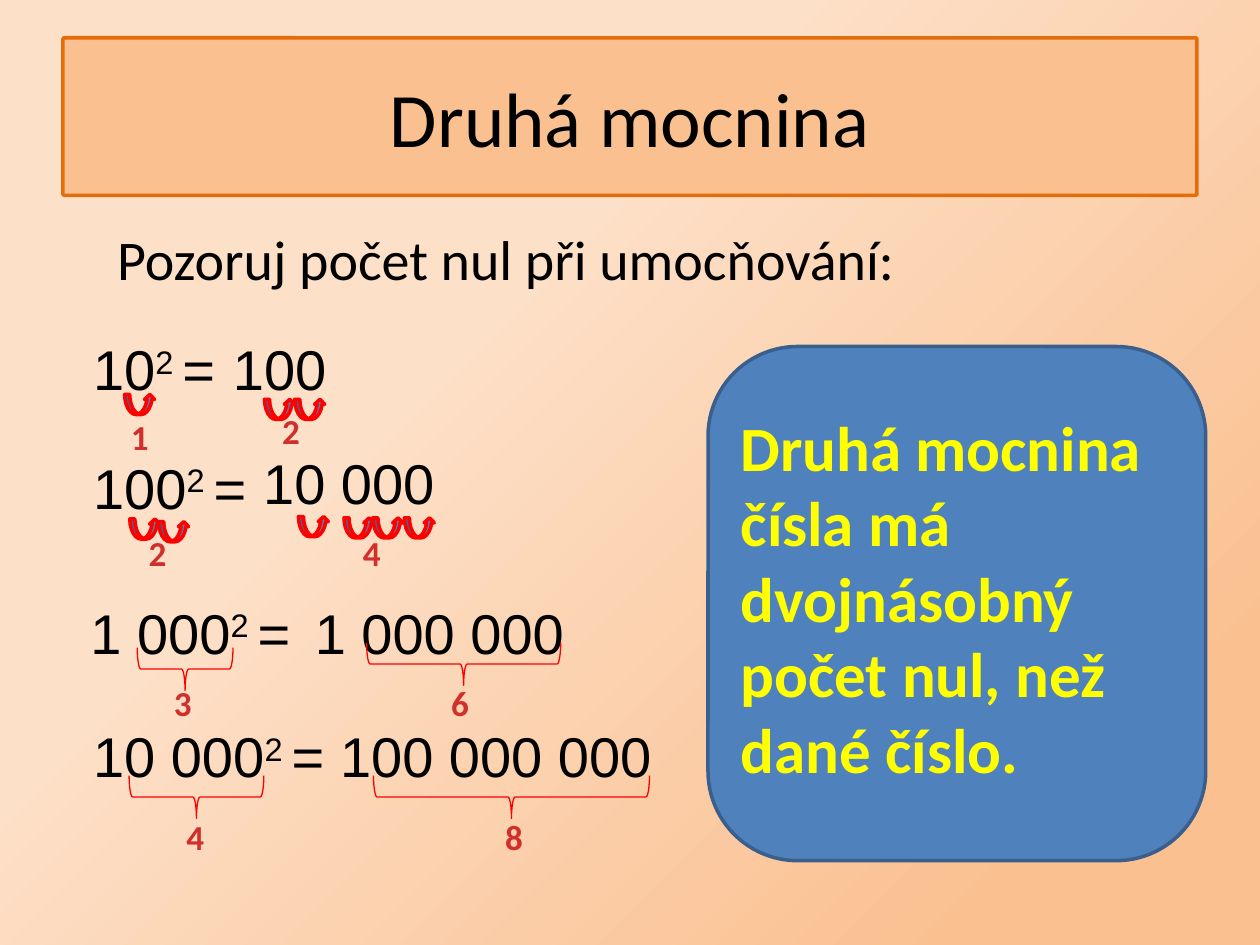
from dataclasses import dataclass

from pptx import Presentation
from pptx.dml.color import RGBColor
from pptx.enum.shapes import MSO_SHAPE
from pptx.enum.text import MSO_ANCHOR, MSO_AUTO_SIZE, PP_ALIGN
from pptx.util import Pt

COLORS = {
    "light peach": "FDE0C8",
    "peach": "FAC090",
    "orange": "E46C0A",
    "blue": "4F81BD",
    "dark blue": "3A5F8C",
    "red": "FF0000",
    "count red": "D02F2C",
    "yellow": "FFFF00",
    "black": "000000",
}
ROW_HEIGHT = 46.1
HOP_SIZE = (17.3, 11.5)
COUNT_SIZE = (24.5, 31.7)
BRACE_DEPTH = 24.5


@dataclass
class Box:
    left: float
    top: float
    width: float
    height: float = ROW_HEIGHT

    def lengths(self) -> list:
        return [Pt(v) for v in (self.left, self.top, self.width, self.height)]


@dataclass
class Equation:
    base: str
    power_box: Box
    result: str
    result_box: Box


@dataclass
class Brace:
    center_x: float
    center_y: float
    span: float


@dataclass
class ZeroCount:
    digit: str
    left: float
    top: float


EQUATIONS = [
    Equation("10", Box(46.1, 187.9, 87.1), "100", Box(126, 187.9, 68.4)),
    Equation("100", Box(46.1, 255.6, 105.1), "10 000", Box(143.3, 252.7, 113)),
    Equation("1 000", Box(44.6, 338.4, 131.8), "1 000 000", Box(172.8, 338.4, 167)),
    Equation("10 000", Box(46.1, 409, 149.8), "100 000 000", Box(187.2, 409, 193.7)),
]
HOPS = [
    (71.3, 225.4), (151.2, 228.2), (168.5, 228.2),
    (74.2, 296.6), (90.7, 298.1), (170.6, 295.2),
    (196.6, 295.9), (213.1, 295.9), (231.1, 295.9),
]
COUNTS = [
    ZeroCount("1", 67.7, 234), ZeroCount("2", 154.1, 230.4),
    ZeroCount("2", 77.8, 300.2), ZeroCount("4", 200.2, 300.2),
    ZeroCount("3", 92.2, 385.9), ZeroCount("6", 250.6, 385.9),
    ZeroCount("4", 99.4, 462.2), ZeroCount("8", 281.5, 462.2),
]
BRACES = [
    Brace(105.8, 382.3, 54.7), Brace(265, 379.4, 110.9),
    Brace(112.3, 455.4, 77), Brace(292.3, 455.4, 157.7),
]


def rgb(name: str) -> RGBColor:
    return RGBColor.from_string(COLORS[name])


def add_figure(shapes, kind, box: Box, line: str, fill: str = "", weight: float = 2):
    figure = shapes.add_shape(kind, *box.lengths())
    figure.shadow.inherit = False
    if fill:
        figure.fill.solid()
        figure.fill.fore_color.rgb = rgb(fill)
    else:
        figure.fill.background()
    figure.line.color.rgb = rgb(line)
    figure.line.width = Pt(weight)
    return figure


def write(frame, text: str, *, exponent: str = "", after: str = "", size: float = 32,
          font: str = "Arial", color: str = "black", bold: bool = False,
          align=PP_ALIGN.LEFT, wrap: bool = False) -> None:
    frame.word_wrap = wrap
    paragraph = frame.paragraphs[0]
    paragraph.alignment = align
    for part in filter(None, (text, exponent, after)):
        run = paragraph.add_run()
        run.text = part
        run.font.size = Pt(size)
        run.font.name = font
        run.font.bold = bold
        run.font.color.rgb = rgb(color)
        if part is exponent:
            run.font._element.set("baseline", "30000")


def add_text(shapes, box: Box, text: str, **text_format) -> None:
    frame = shapes.add_textbox(*box.lengths()).text_frame
    write(frame, text, **text_format)
    frame.auto_size = MSO_AUTO_SIZE.SHAPE_TO_FIT_TEXT


def add_brace(shapes, brace: Brace) -> None:
    # The box is given before the quarter turn
    box = Box(brace.center_x - BRACE_DEPTH / 2, brace.center_y - brace.span / 2,
              BRACE_DEPTH, brace.span)
    add_figure(shapes, MSO_SHAPE.LEFT_BRACE, box, "red", weight=0.75).rotation = 270


def main() -> None:
    deck = Presentation()
    deck.slide_width, deck.slide_height = Pt(720), Pt(540)
    slide = deck.slides.add_slide(deck.slide_layouts[6])
    shapes = slide.shapes

    # Background
    backdrop = slide.background.fill
    backdrop.gradient()
    backdrop.gradient_angle = 315
    for stop, (position, name) in zip(backdrop.gradient_stops,
                                      [(0.36, "light peach"), (0.86, "peach")]):
        stop.position = position
        stop.color.rgb = rgb(name)

    # Title and task
    title = add_figure(shapes, MSO_SHAPE.ROUNDED_RECTANGLE, Box(36, 21.6, 648, 90),
                       "orange", "peach")
    title.adjustments[0] = 0.01
    title.text_frame.vertical_anchor = MSO_ANCHOR.MIDDLE
    write(title.text_frame, "Druhá mocnina", size=44, font="Calibri",
          align=PP_ALIGN.CENTER, wrap=True)
    add_text(shapes, Box(59.8, 124.6, 617.8, 54.7), "Pozoruj počet nul při umocňování:",
             font="Calibri", wrap=True)

    # Hops under single zeros
    for left, top in HOPS:
        add_figure(shapes, MSO_SHAPE.CURVED_UP_ARROW, Box(left, top, *HOP_SIZE),
                   "red", "blue")

    # Numbers of zeros
    for count in COUNTS:
        add_text(shapes, Box(count.left, count.top, *COUNT_SIZE), count.digit, size=20,
                 font="Calibri", color="count red", bold=True, align=PP_ALIGN.CENTER)

    # Equations
    for equation in EQUATIONS:
        add_text(shapes, equation.result_box, equation.result)
        add_text(shapes, equation.power_box, equation.base, exponent="2 ", after="=")

    # Rule
    rule = shapes.add_group_shape().shapes
    panel = add_figure(rule, MSO_SHAPE.ROUNDED_RECTANGLE, Box(404.6, 198, 284.4, 293.8),
                       "dark blue", "blue")
    panel.adjustments[0] = 0.18
    add_text(rule, Box(416.2, 229.7, 261.4, 225.4),
             "Druhá mocnina čísla má dvojnásobný počet nul, než dané číslo.",
             size=36, font="Calibri", color="yellow", bold=True, wrap=True)

    # Braces under groups of zeros
    for brace in BRACES:
        add_brace(shapes, brace)

    deck.save("out.pptx")


if __name__ == "__main__":
    main()
